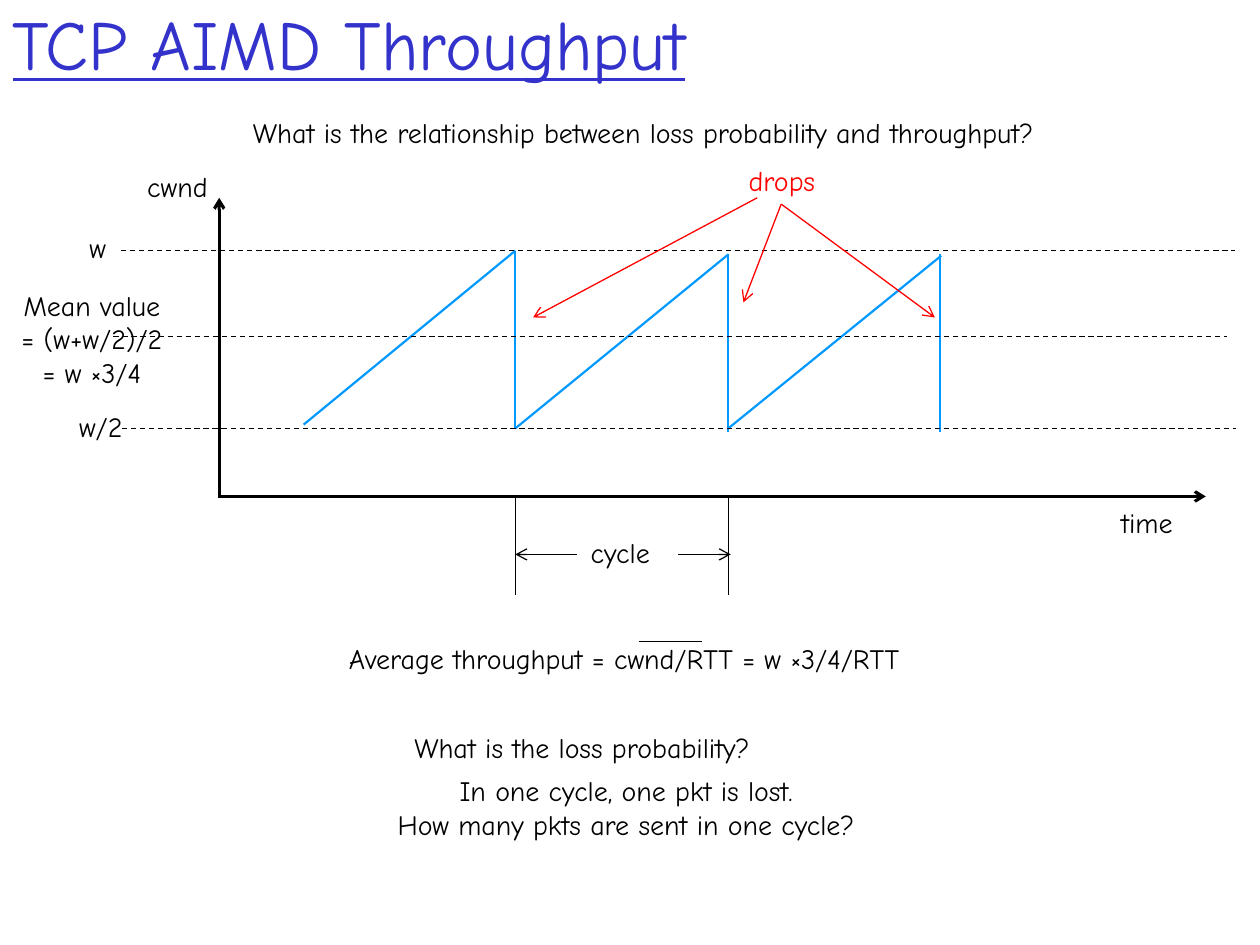
"""Build the TCP AIMD throughput slide."""
from pptx import Presentation
from pptx.dml.color import RGBColor
from pptx.enum.dml import MSO_LINE
from pptx.enum.shapes import MSO_CONNECTOR
from pptx.enum.text import MSO_ANCHOR, MSO_AUTO_SIZE, PP_ALIGN
from pptx.oxml.ns import qn
from pptx.util import Emu, Pt
from lxml.etree import SubElement

PX = 9144
FONT = "Comic Neue"
BLACK, RED, BLUE, INDIGO = "000000", "FF0000", "0099FF", "3333CC"
LEFT, CENTER = PP_ALIGN.LEFT, PP_ALIGN.CENTER

TITLE = "TCP AIMD Throughput"
TITLE_BOX = (0, -2, 850, 72)

LABELS = [
    ("w", (60, 178, 35, 37), CENTER, BLACK),
    ("w/2", (50, 320, 60, 37), CENTER, BLACK),
    ("Mean value\n= (w+w/2)/2\n= w ×3/4", (0, 224, 146, 90), CENTER, BLACK),
    ("Average throughput = cwnd/RTT = w ×3/4/RTT", (267, 504, 532, 37), LEFT, BLACK),
    ("time", (880, 396, 67, 37), LEFT, BLACK),
    ("cwnd", (107, 130, 72, 37), LEFT, BLACK),
    ("drops", (581, 125, 79, 37), CENTER, RED),
    ("What is the loss probability?", (319, 575, 338, 37), LEFT, BLACK),
    ("In one cycle, one pkt is lost.\nHow many pkts are sent in one cycle?",
     (293, 609, 408, 64), CENTER, BLACK),
    ("What is the relationship between loss probability and throughput?",
     (191, 87, 723, 37), LEFT, BLACK),
]
CYCLE_LABEL = ("cycle", (459, 420, 73, 37), LEFT, BLACK)

SAWTOOTH = [
    (241, 337, 409, 199), (409, 199, 409, 340),
    (409, 340, 578, 202), (578, 202, 578, 343),
    (578, 340, 747, 203), (746, 202, 746, 343),
]
LEVELS = [(96, 199), (97, 340), (90, 267)]
LEVEL_LENGTH = 884
AXES = [(174, 395, 174, 157), (174, 394, 957, 394)]
DROP_ARROWS = [(601, 157, 423, 252), (620, 162, 590, 240), (620, 162, 742, 252)]
CYCLE_EDGES = [409, 578]
CYCLE_ARROWS = [(538, 440, 580, 440), (458, 440, 409, 440)]
MEAN_BAR = (507, 509, 557, 509)


def color(value):
    return RGBColor.from_string(value)


def emu(lengths):
    return [Emu(length * PX) for length in lengths]


def format_text(text_frame, size, text_color, align):
    for paragraph in text_frame.paragraphs:
        paragraph.alignment = align
        for run in paragraph.runs:
            run.font.name = FONT
            run.font.size = Pt(size)
            run.font.color.rgb = color(text_color)


def add_label(shapes, text, box, align, text_color):
    text_frame = shapes.add_textbox(*emu(box)).text_frame
    text_frame.text = text
    text_frame.word_wrap = False
    text_frame.auto_size = MSO_AUTO_SIZE.SHAPE_TO_FIT_TEXT
    format_text(text_frame, 16, text_color, align)


def add_line(shapes, points, line_color=BLACK, width=0.75, dashed=False, arrow=False):
    connector = shapes.add_connector(MSO_CONNECTOR.STRAIGHT, *emu(points))
    connector.line.color.rgb = color(line_color)
    connector.line.width = Pt(width)
    if dashed:
        connector.line.dash_style = MSO_LINE.DASH
    if arrow:
        SubElement(connector.line._get_or_add_ln(), qn("a:tailEnd"), type="arrow")
    SubElement(connector._element.spPr, qn("a:effectLst"))


def add_title(slide):
    title = slide.shapes.title
    title.left, title.top, title.width, title.height = emu(TITLE_BOX)
    title.text_frame.text = TITLE
    title.text_frame.vertical_anchor = MSO_ANCHOR.MIDDLE
    format_text(title.text_frame, 40, INDIGO, LEFT)
    title.text_frame.paragraphs[0].runs[0].font.underline = True


def add_cycle(slide):
    shapes = slide.shapes.add_group_shape().shapes
    add_label(shapes, *CYCLE_LABEL)
    for x in CYCLE_EDGES:
        add_line(shapes, (x, 393, x, 472))
    for points in CYCLE_ARROWS:
        add_line(shapes, points, arrow=True)


def main():
    presentation = Presentation()
    presentation.slide_width, presentation.slide_height = emu((1000, 750))
    slide = presentation.slides.add_slide(presentation.slide_layouts[5])
    shapes = slide.shapes
    add_title(slide)
    for points in SAWTOOTH:
        add_line(shapes, points, BLUE, 1.25)
    for x, y in LEVELS:
        add_line(shapes, (x, y, x + LEVEL_LENGTH, y), dashed=True)
    for points in AXES:
        add_line(shapes, points, width=1.75, arrow=True)
    for label in LABELS:
        add_label(shapes, *label)
    for points in DROP_ARROWS:
        add_line(shapes, points, RED, arrow=True)
    add_cycle(slide)
    add_line(shapes, MEAN_BAR)
    presentation.save("out.pptx")


if __name__ == "__main__":
    main()
